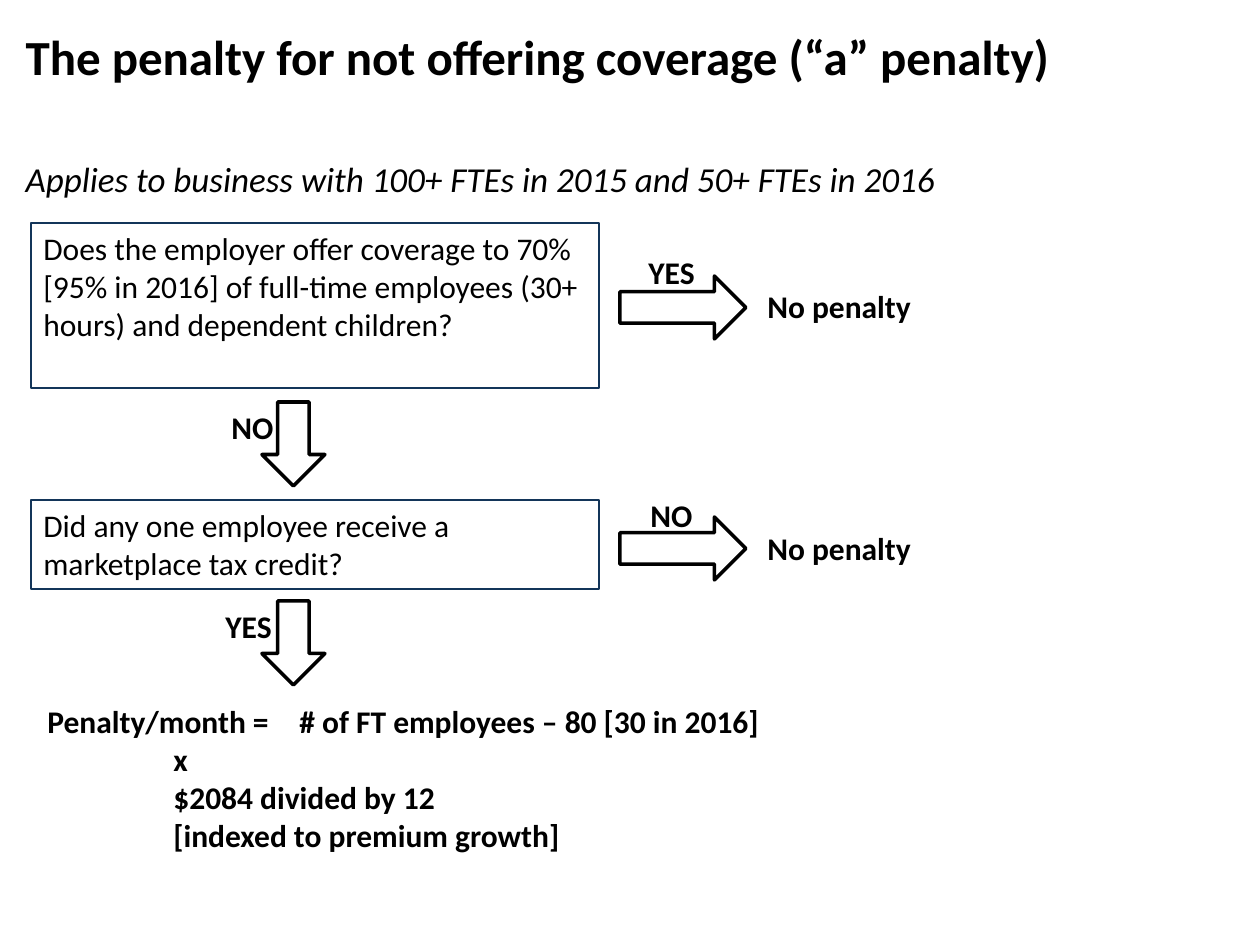
from pptx import Presentation
from pptx.dml.color import RGBColor
from pptx.enum.shapes import MSO_SHAPE as Shape
from pptx.enum.text import MSO_ANCHOR as Anchor, MSO_AUTO_SIZE as Fit, PP_ALIGN as Align
from pptx.util import Pt
from lxml import etree

PX = 914400 // 126
FONT, BLACK, WHITE, NAVY = "Calibri", "000000", "FFFFFF", "133559"

TITLE = "The penalty for not offering coverage (“a” penalty)"
SCOPE = "Applies to business with 100+ FTEs in 2015 and 50+ FTEs in 2016"

# question, top and height of its box
STEPS = [
    ("Does the employer offer coverage to 70% [95% in 2016] of full-time "
     "employees (30+ hours) and dependent children?", 223, 165),
    ("Did any one employee receive a marketplace tax credit?", 500, 89),
]
# tops of the side arrow, its label and the result
SIDES = [("YES", 276, 247, 281), ("NO", 517, 490, 523)]
# left of the label, top of label and down arrow
DOWNS = [("NO", 179, 402), ("YES", 175, 601)]
RESULT = "No penalty"
FORMULA = [
    "Penalty/month =\t# of FT employees – 80 [30 in 2016]",
    "\t\tx",
    "\t\t$2084 divided by 12",
    "\t\t[indexed to premium growth]",
]

LABEL = (147, 50)


def color(code):
    return RGBColor.from_string(code)


def place(*box):
    return [n * PX for n in box]


def write(frame, lines, size=18, bold=False, italic=False, align=Align.LEFT):
    frame.word_wrap = True
    frame.auto_size = Fit.NONE
    frame.vertical_anchor = Anchor.TOP
    for i, line in enumerate(lines):
        para = frame.add_paragraph() if i else frame.paragraphs[0]
        para.alignment = align
        run = para.add_run()
        run.text = line
        font = run.font
        font.name, font.size = FONT, Pt(size)
        font.bold, font.italic = bold, italic
        font.color.rgb = color(BLACK)


def fill_holder(holder, box, text, **style):
    holder.left, holder.top, holder.width, holder.height = place(*box)
    write(holder.text_frame, [text], **style)


def add_text(slide, box, lines, **style):
    shape = slide.shapes.add_textbox(*place(*box))
    write(shape.text_frame, lines, **style)
    return shape


def add_arrow(slide, kind, box):
    arrow = slide.shapes.add_shape(kind, *place(*box))
    arrow.shadow.inherit = False
    arrow.fill.solid()
    arrow.fill.fore_color.rgb = color(WHITE)
    arrow.line.color.rgb = color(BLACK)
    arrow.line.width = Pt(2)


def no_bullet(para):
    props = para._p.get_or_add_pPr()
    props.set("marL", "0")
    props.set("indent", "0")
    etree.SubElement(props, props.tag.replace("pPr", "buNone"))


def main():
    deck = Presentation()
    deck.slide_width, deck.slide_height = place(1260, 945)
    slide = deck.slides.add_slide(deck.slide_layouts[1])
    title, body = slide.placeholders
    fill_holder(title, (13, 20, 1235, 126), TITLE, size=28, bold=True)
    fill_holder(body, (13, 151, 1235, 693), SCOPE, size=20, italic=True)
    no_bullet(body.text_frame.paragraphs[0])

    for (ask, top, high), (word, point, label, end) in zip(STEPS, SIDES):
        box = add_text(slide, (31, top, 568, high), [ask])
        box.line.color.rgb = color(NAVY)
        box.line.width = Pt(0.75)
        add_arrow(slide, Shape.RIGHT_ARROW, (620, point, 126, 63))
        add_text(slide, (598, label, *LABEL), [word], bold=True, align=Align.CENTER)
        add_text(slide, (755, end, 252, 50), [RESULT], bold=True)

    for word, left, top in DOWNS:
        add_arrow(slide, Shape.DOWN_ARROW, (262, top, 63, 84))
        add_text(slide, (left, top, *LABEL), [word], bold=True, align=Align.CENTER)

    add_text(slide, (35, 696, 752, 165), FORMULA, bold=True)
    deck.save("out.pptx")


if __name__ == "__main__":
    main()
